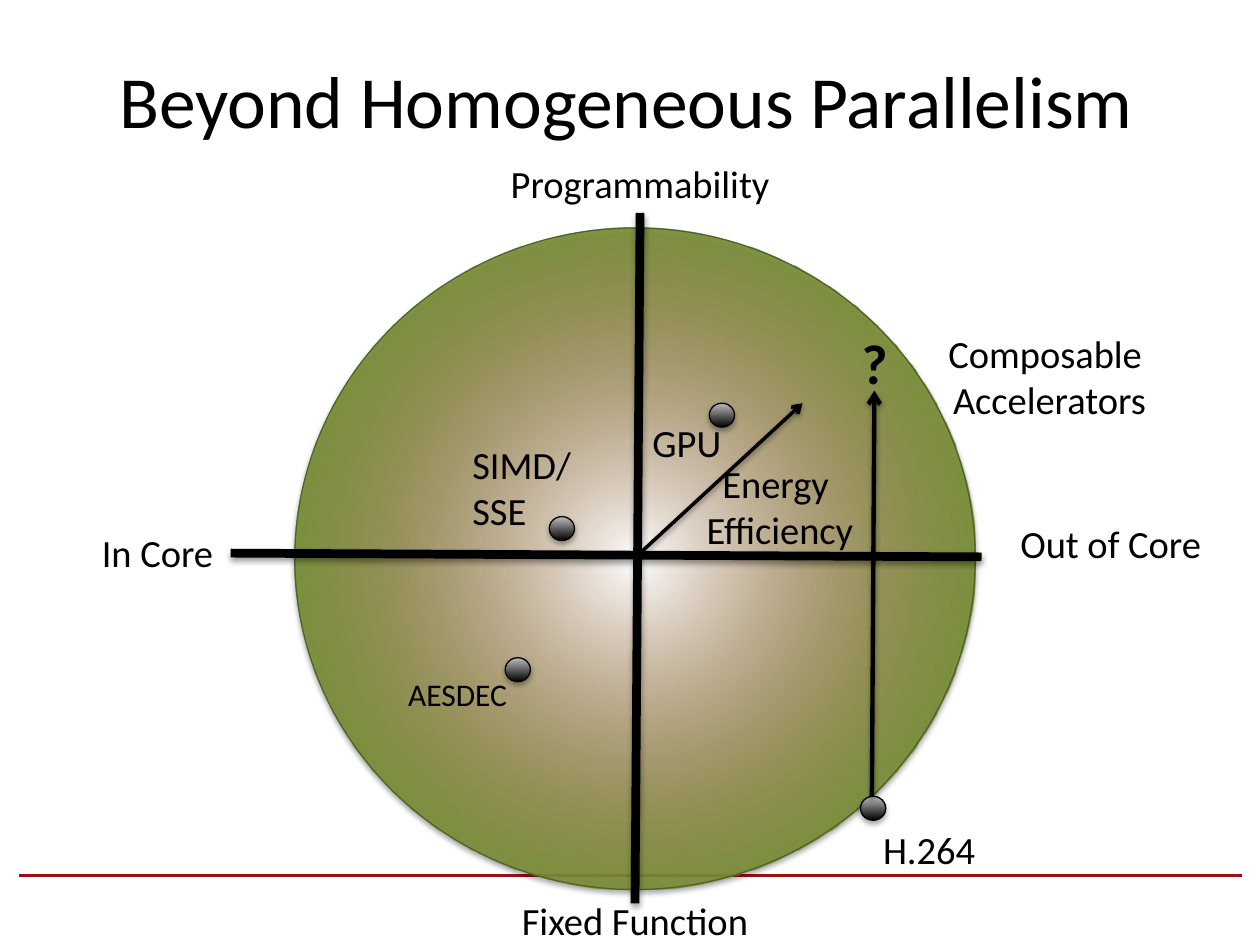
"""Build the slide that places accelerators by programmability and distance from the core."""
from dataclasses import dataclass
from typing import Optional

from pptx import Presentation
from pptx import util as u
from pptx.dml.color import RGBColor
from pptx.enum import shapes, text
from pptx.oxml import parse_xml
from pptx.oxml.ns import nsdecls

BLACK = RGBColor(0x00, 0x00, 0x00)
SILVER = RGBColor(0xBD, 0xBD, 0xBD)
BROWN = RGBColor(0x98, 0x48, 0x07)
GREEN = RGBColor(0x77, 0x93, 0x3C)
DARK_GREEN = RGBColor(0x4F, 0x62, 0x28)
RED = RGBColor(0x97, 0x12, 0x17)
FONT = "Calibri"
LEFT, CENTER = text.PP_ALIGN.LEFT, text.PP_ALIGN.CENTER
CENTERED_SHADE = ('<a:path path="circle"><a:fillToRect l="50000" t="50000" '
                  'r="50000" b="50000"/></a:path>')
UPWARD_SHADE = '<a:lin ang="16200000" scaled="0"/>'


@dataclass(frozen=True)
class Stop:
    pos: int
    color: RGBColor
    alpha: int = 100


@dataclass(frozen=True)
class Oval:
    x: float
    y: float
    w: float
    h: float
    stops: tuple[Stop, ...]
    shade: str
    line: RGBColor


@dataclass(frozen=True)
class Line:
    x1: float
    y1: float
    x2: float
    y2: float
    width: float
    color: RGBColor = BLACK
    arrow: bool = False
    shadow: Optional[tuple[int, float]] = None


@dataclass(frozen=True)
class Label:
    text: str
    x: float
    y: float
    w: float
    h: float
    align: text.PP_ALIGN = LEFT
    size: int = 22
    bold: bool = False
    wrap: bool = True
    anchor: text.MSO_ANCHOR = text.MSO_ANCHOR.TOP


AXIS_SHADOW, LINE_SHADOW = (35, 1.8), (38, 1.6)
DOT_STOPS = (Stop(0, BLACK), Stop(100, SILVER))

RULE = Line(0.15, 6.95, 9.86, 6.95, 2, RED)
FIELD = Oval(2.34, 1.81, 5.4, 5.25, (Stop(0, BROWN, 0), Stop(75, GREEN)),
             CENTERED_SHADE, DARK_GREEN)
AXES = (
    Line(5.08, 1.69, 5.04, 7.17, 5, shadow=AXIS_SHADOW),
    Line(1.83, 4.39, 7.79, 4.42, 5, shadow=LINE_SHADOW),
)
DOTS = tuple(Oval(x, y, 0.2, 0.19, DOT_STOPS, UPWARD_SHADE, BLACK)
             for x, y in ((5.63, 3.2), (4.01, 5.22), (6.83, 6.32), (4.36, 4.1)))
ARROWS = (
    Line(5.08, 4.39, 6.37, 3.2, 2, arrow=True, shadow=LINE_SHADOW),
    Line(6.92, 6.32, 6.94, 3.1, 2.5, arrow=True, shadow=LINE_SHADOW),
)
TITLE = Label("Beyond Homogeneous Parallelism", 0.47, 0.16, 9, 1.25, CENTER, 42,
              anchor=text.MSO_ANCHOR.MIDDLE)
LABELS = (
    Label("SIMD/ SSE", 3.65, 3.45, 1.01, 0.84),
    Label("AESDEC", 3.14, 5.31, 1.22, 0.71, size=18),
    Label("In Core", 0.71, 4.15, 1.13, 0.47),
    Label("Out of Core", 8, 4.08, 1.88, 0.47),
    Label("GPU", 5.08, 3.28, 0.88, 0.47),
    Label("H.264", 6.91, 6.51, 1.09, 0.47),
    Label("Composable \nAccelerators", 7.33, 2.57, 2, 0.84, CENTER),
    Label("Energy \nEfficiency", 5.44, 3.6, 1.5, 0.84, CENTER),
    Label("Programmability", 3.79, 1.22, 2.58, 0.47, CENTER),
    Label("Fixed Function", 3.86, 7.07, 2.36, 0.47, CENTER),
    Label("?", 6.74, 2.56, 0.28, 0.64, CENTER, 32, bold=True, wrap=False),
)


def set_effects(sp, shadow: Optional[tuple[int, float]]) -> None:
    """Give a shape or connector a downward shadow, or none."""
    outer = ""
    if shadow:
        alpha, dist = shadow
        outer = (f'<a:outerShdw blurRad="{u.Pt(3.1)}" dist="{u.Pt(dist)}" dir="5400000" '
                 f'rotWithShape="0"><a:srgbClr val="{BLACK}">'
                 f'<a:alpha val="{alpha * 1000}"/></a:srgbClr></a:outerShdw>')
    sp.element.spPr.append(
        parse_xml(f'<a:effectLst {nsdecls("a")}>{outer}</a:effectLst>'))


def add_line(s, line: Line) -> None:
    """Draw a straight line, with an arrowhead if asked."""
    sp = s.shapes.add_connector(
        shapes.MSO_CONNECTOR.STRAIGHT,
        *(u.Inches(v) for v in (line.x1, line.y1, line.x2, line.y2)))
    sp.line.color.rgb = line.color
    sp.line.width = u.Pt(line.width)
    if line.arrow:
        sp.element.spPr.ln.append(
            parse_xml(f'<a:tailEnd {nsdecls("a")} type="arrow"/>'))
    set_effects(sp, line.shadow)


def add_oval(s, oval: Oval) -> None:
    """Draw an ellipse with a gradient fill and a shadow."""
    sp = s.shapes.add_shape(
        shapes.MSO_SHAPE.OVAL,
        *(u.Inches(v) for v in (oval.x, oval.y, oval.w, oval.h)))
    sp.line.color.rgb = oval.line
    sp.line.width = u.Pt(0.75)
    stops = "".join(
        f'<a:gs pos="{stop.pos * 1000}"><a:srgbClr val="{stop.color}">'
        f'<a:alpha val="{stop.alpha * 1000}"/></a:srgbClr></a:gs>'
        for stop in oval.stops)
    sp.element.spPr.ln.addprevious(parse_xml(
        f'<a:gradFill {nsdecls("a")} rotWithShape="1"><a:gsLst>{stops}</a:gsLst>'
        f'{oval.shade}</a:gradFill>'))
    set_effects(sp, AXIS_SHADOW)


def add_label(s, label: Label) -> None:
    """Write a text box of one or more paragraphs."""
    sp = s.shapes.add_textbox(
        *(u.Inches(v) for v in (label.x, label.y, label.w, label.h)))
    tf = sp.text_frame
    tf.word_wrap = label.wrap
    tf.vertical_anchor = label.anchor
    tf.text = label.text
    for p in tf.paragraphs:
        p.alignment = label.align
        for r in p.runs:
            r.font.name = FONT
            r.font.size = u.Pt(label.size)
            r.font.bold = label.bold
            r.font.color.rgb = BLACK


def main() -> None:
    """Build and save the slide."""
    prs = Presentation()
    prs.slide_width, prs.slide_height = u.Inches(10), u.Inches(7.5)
    s = prs.slides.add_slide(prs.slide_layouts[6])
    add_line(s, RULE)
    add_label(s, TITLE)
    add_oval(s, FIELD)
    for axis in AXES:
        add_line(s, axis)
    for dot in DOTS:
        add_oval(s, dot)
    for arrow in ARROWS:
        add_line(s, arrow)
    for label in LABELS:
        add_label(s, label)
    prs.save("out.pptx")


if __name__ == "__main__":
    main()
